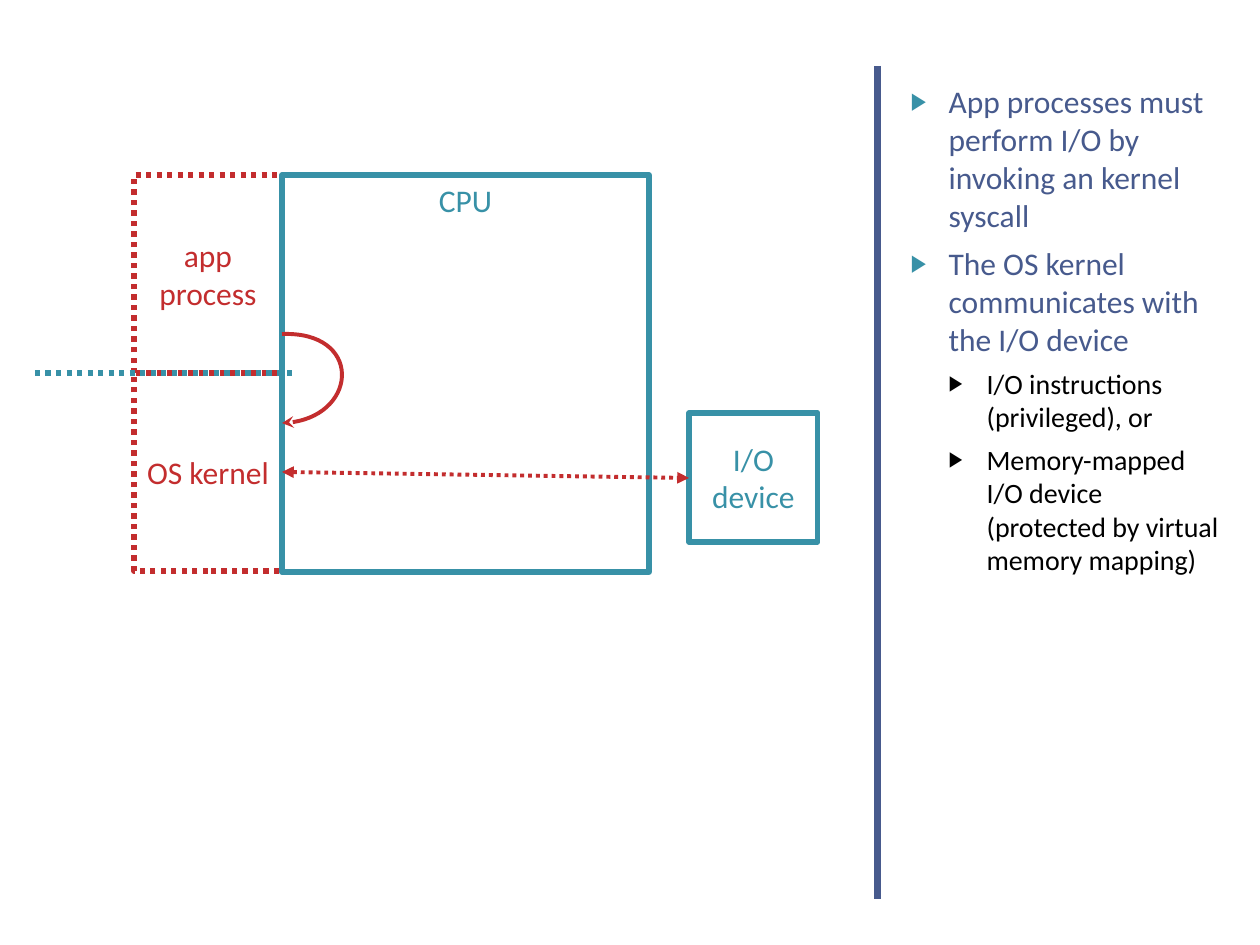
from dataclasses import dataclass
from lxml import etree
from pptx import Presentation
from pptx import util as u
from pptx.dml.color import RGBColor
from pptx.enum import dml, shapes, text
from pptx.oxml import ns

SCALE = 914400 / 126
FONT = "Calibri"
COLORS = {"navy": "475A8D", "teal": "3891A7", "red": "C32D2E", "black": "000000"}


@dataclass
class Box:
    label: str
    left: int
    top: int
    width: int
    height: int
    color: str
    dotted: bool = False
    anchor: text.MSO_ANCHOR = text.MSO_ANCHOR.MIDDLE


@dataclass
class Line:
    start: tuple[int, int]
    end: tuple[int, int]
    color: str
    weight: float
    dotted: bool = True
    arrows: bool = False


@dataclass
class Level:
    size: int
    color: str
    bullet: str
    gap: int
    indent: int


LEVELS = [Level(18, "navy", "teal", 6, 38), Level(16, "black", "black", 5, 76)]
POINTS = [
    (0, "App processes must perform I/O by invoking an kernel syscall"),
    (0, "The OS kernel communicates with the I/O device"),
    (1, "I/O instructions (privileged), or"),
    (1, "Memory-mapped I/O device (protected by virtual memory mapping)"),
]
RULE = Line((878, 66), (878, 899), "navy", 4, dotted=False)
BOXES = [
    Box("app process", 134, 175, 148, 198, "red", dotted=True),
    Box("OS kernel", 134, 373, 148, 198, "red", dotted=True),
    Box("CPU", 282, 175, 367, 397, "teal", anchor=text.MSO_ANCHOR.TOP),
    Box("I/O device", 689, 413, 129, 129, "teal"),
]
LINK = Line((282, 472), (689, 478), "red", 2.25, arrows=True)
BORDER = Line((35, 373), (292, 373), "teal", 3)
CURVE = [(282, 334), (362, 331), (358, 421), (282, 423)]


def px(count: int) -> int:
    return round(count * SCALE)


def rgb(name: str) -> RGBColor:
    return RGBColor.from_string(COLORS[name])


def add(parent, tag: str, **attrs: str):
    return etree.SubElement(parent, ns.qn(tag), attrs)


def stroke(line, color: str, weight: float, dotted: bool = False) -> None:
    line.color.rgb = rgb(color)
    line.width = u.Pt(weight)
    if dotted:
        line.dash_style = dml.MSO_LINE.ROUND_DOT


def style(para, size: int, color: str) -> None:
    for run in para.runs:
        run.font.name = FONT
        run.font.size = u.Pt(size)
        run.font.color.rgb = rgb(color)


def draw_box(slide, box: Box) -> None:
    dims = map(px, (box.left, box.top, box.width, box.height))
    shape = slide.shapes.add_shape(shapes.MSO_SHAPE.RECTANGLE, *dims)
    shape.shadow.inherit = False
    shape.fill.background()
    stroke(shape.line, box.color, 3, box.dotted)
    frame = shape.text_frame
    frame.text = box.label
    frame.word_wrap = True
    frame.vertical_anchor = box.anchor
    para = frame.paragraphs[0]
    para.alignment = text.PP_ALIGN.CENTER
    style(para, 18, box.color)


def draw_line(slide, line: Line) -> None:
    ends = map(px, (*line.start, *line.end))
    shape = slide.shapes.add_connector(shapes.MSO_CONNECTOR.STRAIGHT, *ends)
    stroke(shape.line, line.color, line.weight, line.dotted)
    props = shape._element.spPr
    if line.arrows:
        edge = props.find(ns.qn("a:ln"))
        for tag in ("a:headEnd", "a:tailEnd"):
            add(edge, tag, type="triangle")
    add(props, "a:effectLst")


def draw_curve(slide, nodes: list[tuple[int, int]]) -> None:
    build = slide.shapes.build_freeform(*nodes[0], scale=SCALE)
    build.add_line_segments(nodes[1:], close=False)
    shape = build.convert_to_shape()
    shape.shadow.inherit = False
    shape.fill.background()
    stroke(shape.line, "red", 2.25)
    props = shape._element.spPr
    add(props.find(ns.qn("a:ln")), "a:tailEnd", type="stealth")
    track = next(props.iter(ns.qn("a:path")))
    steps = track.findall(ns.qn("a:lnTo"))
    bend = add(track, "a:cubicBezTo")
    for step in steps:
        bend.append(step[0])
        track.remove(step)


def fill_list(body) -> None:
    body.left, body.top, body.width, body.height = map(px, (898, 76, 338, 814))
    frame = body.text_frame
    frame.text = "\n".join(words for _, words in POINTS)
    frame.word_wrap = True
    frame.auto_size = text.MSO_AUTO_SIZE.NONE
    frame.vertical_anchor = text.MSO_ANCHOR.TOP
    for para, (depth, _) in zip(frame.paragraphs, POINTS):
        level = LEVELS[depth]
        para.level = depth
        para.space_before = u.Pt(level.gap)
        style(para, level.size, level.color)
        props = para._p.get_or_add_pPr()
        props.set("marL", str(px(level.indent)))
        props.set("indent", str(-px(LEVELS[0].indent)))
        add(add(props, "a:buClr"), "a:srgbClr", val=COLORS[level.bullet])
        add(props, "a:buSzPct", val="76000")
        add(props, "a:buChar", char="▶")


def main() -> None:
    deck = Presentation()
    deck.slide_width, deck.slide_height = px(1260), px(945)
    slide = deck.slides.add_slide(deck.slide_layouts[1])
    title = slide.shapes.title._element
    title.getparent().remove(title)
    fill_list(slide.placeholders[1])
    draw_line(slide, RULE)
    for box in BOXES:
        draw_box(slide, box)
    draw_line(slide, LINK)
    draw_curve(slide, CURVE)
    draw_line(slide, BORDER)
    deck.save("out.pptx")


if __name__ == "__main__":
    main()
